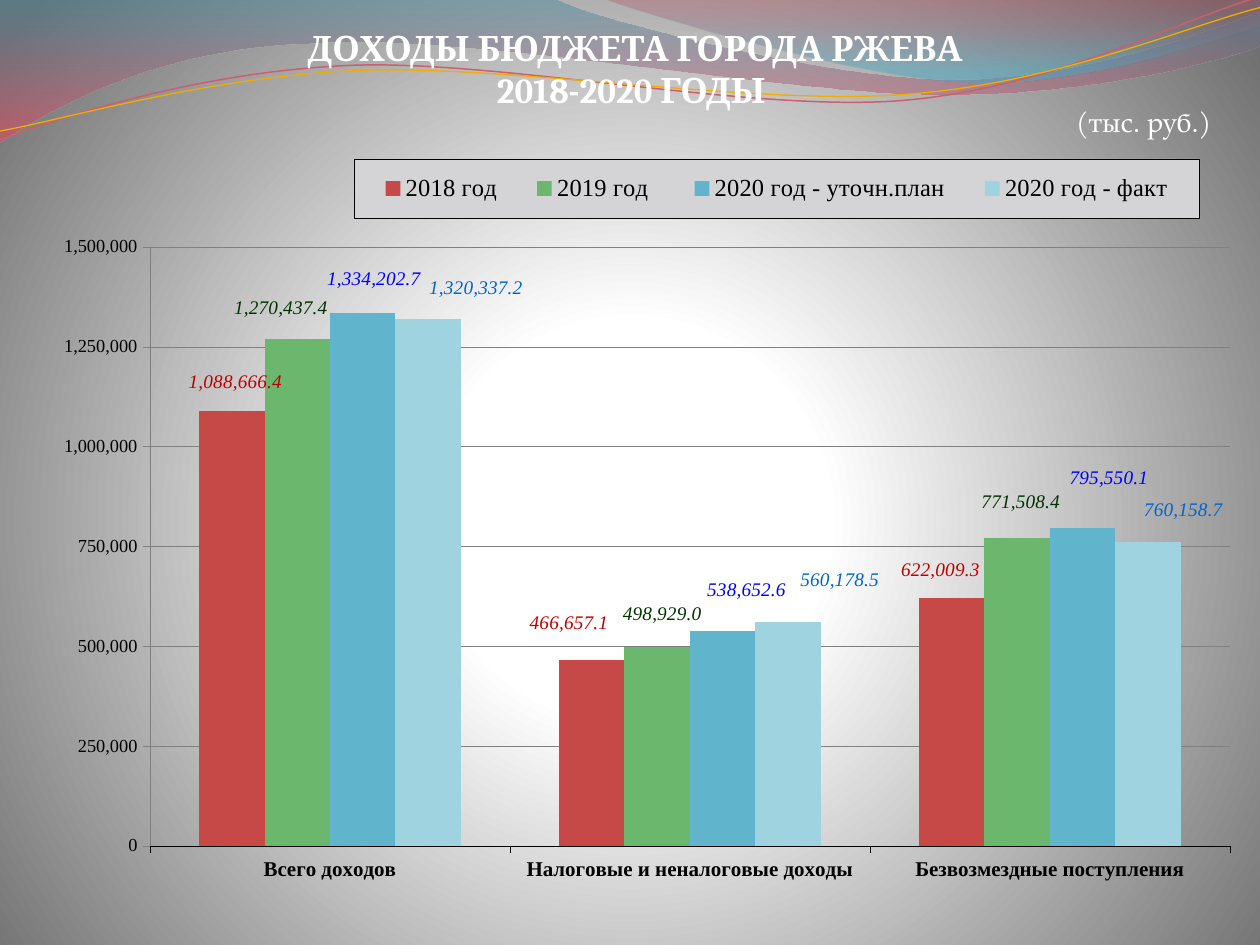
from math import cos, radians, sin

from pptx import Presentation
from pptx.chart.data import CategoryChartData
from pptx.dml.color import RGBColor
from pptx.enum.chart import (XL_CHART_TYPE as ChartType, XL_LABEL_POSITION as LabelPosition,
                             XL_LEGEND_POSITION as LegendPosition,
                             XL_TICK_LABEL_POSITION as TickLabels, XL_TICK_MARK as TickMark)
from pptx.enum.text import MSO_ANCHOR as Anchor, MSO_AUTO_SIZE as AutoSize, PP_ALIGN as Align
from pptx.oxml import parse_xml
from pptx.oxml.ns import nsdecls, qn
from pptx.util import Inches, Pt

COLORS = {
    "white": "FFFFFF", "black": "000000", "edge": "707070", "grid": "808080",
    "legend": "D4D4D6", "teal": "3F8A9F", "coral": "EF445B", "wine": "B84253",
    "sky": "42ABC7", "rose": "CB5F6E", "amber": "F0AD00",
}
SERIF = "Times New Roman"
BODY = "TeX Gyre Pagella"
DOWNWARD = '<a:lin ang="5400000" scaled="1"/>'
RADIAL = '<a:path path="circle"><a:fillToRect l="50000" t="55000" r="50000" b="45000"/></a:path>'
CHART_SIZE = (9.84, 6.33)
CATEGORIES = ["Всего доходов", "Налоговые и неналоговые доходы", "Безвозмездные поступления"]
SERIES = [
    ("2018 год", "C64847", "C00000", (1088666.4, 466657.1, 622009.3),
     ((0.03, -0.11), (-0.18, -0.17), (-0.09, -0.1))),
    ("2019 год ", "6BB76D", "003300", (1270437.4, 498929.0, 771508.4),
     ((-0.13, -0.12), (0.04, -0.14), (0.03, -0.16))),
    ("2020 год - уточн.план", "60B5CC", "0000FF", (1334202.7, 538652.6, 795550.1),
     ((0.09, -0.15), (0.19, -0.2), (0.21, -0.28))),
    ("2020 год - факт", "A0D3E0", "0066CC", (1320337.2, 560178.5, 760158.7),
     ((0.38, -0.12), (0.41, -0.21), (0.28, -0.14))),
]
WIDE_WAVE = [
    (0, 0), (4.4, -0.01), (4.76, 0.17, 6.64, 0.63, 7.58, 0.63),
    (8.53, 0.63, 9.58, 0.26, 10, 0.09), (10.01, 0.36), (9.83, 0.44, 8.7, 0.76, 7.46, 0.75),
    (6.22, 0.75, 3.82, 0.28, 2.57, 0.34), (1.29, 0.36, 0.46, 0.83, -0.01, 1.13), (0, 0),
]
RIGHT_WAVE = [
    (4.79, -0.01), (5.09, 0.11, 6.82, 0.62, 7.69, 0.65),
    (8.56, 0.69, 9.61, 0.32, 10, 0.21), (10, 0), (4.79, -0.01),
]
ROSE_LINE = [
    (0, 1.11), (0.48, 0.93, 1.58, 0.57, 2.77, 0.52),
    (3.95, 0.47, 5.93, 0.89, 7.13, 0.8), (8.33, 0.71, 9.38, 0.15, 9.98, -0.02),
]
AMBER_LINE = [
    (0, 1.04), (0.47, 0.96, 1.64, 0.61, 2.83, 0.56),
    (4.03, 0.51, 5.97, 0.84, 7.17, 0.75), (8.36, 0.67, 9.41, 0.21, 10, 0.06),
]


def rgb(name):
    """Return the colour for a palette name or a hex string."""
    return RGBColor.from_string(COLORS.get(name, name))


def style_font(font, size, face, color="black", bold=False, italic=False):
    """Set the look of a font."""
    font.size, font.name, font.bold, font.italic = Pt(size), face, bold, italic
    font.color.rgb = rgb(color)


def write_text(box, text, align=Align.LEFT, autosize=AutoSize.NONE, **look):
    """Fill a box with one paragraph for each line of text."""
    frame = box.text_frame
    frame.word_wrap, frame.auto_size, frame.vertical_anchor = True, autosize, Anchor.TOP
    for index, line in enumerate(text.split("\n")):
        para = frame.add_paragraph() if index else frame.paragraphs[0]
        para.alignment, para.space_before = align, Pt(0)
        span = para.add_run()
        span.text = line
        style_font(span.font, **look)


def place(box, left, top, width, height):
    """Move and size a box in inches."""
    box.left, box.top, box.width, box.height = map(Inches, (left, top, width, height))


def set_gradient(fill, owner, stops, direction):
    """Give the owner a gradient of (position, colour, opacity) stops."""
    fill.gradient()
    marks = "".join(
        f'<a:gs pos="{pos * 1000}"><a:srgbClr val="{COLORS[color]}">'
        f'<a:alpha val="{opacity * 1000}"/></a:srgbClr></a:gs>'
        for pos, color, opacity in stops)
    old = next(owner.iter(qn("a:gradFill")))
    old.getparent().replace(old, parse_xml(
        f'<a:gradFill {nsdecls("a")} rotWithShape="1"><a:gsLst>{marks}</a:gsLst>{direction}</a:gradFill>'))


def local_point(x, y, frame, rotation):
    """Return the path point that a rotated frame shows at a slide position."""
    left, top, width, height = frame
    dx, dy = x - left - width / 2, y - top - height / 2
    turn = radians(-rotation)
    across = dx * cos(turn) - dy * sin(turn) + width / 2
    down = dx * sin(turn) + dy * cos(turn) + height / 2
    return f'<a:pt x="{Inches(across)}" y="{Inches(down)}"/>'


def add_curve(page, segments, frame, rotation=0):
    """Draw an outline of straight and cubic segments without a shadow."""
    ends = [(Inches(part[-2]), Inches(part[-1])) for part in segments]
    closed = ends[0] == ends[-1]
    builder = page.shapes.build_freeform(*ends[0])
    builder.add_line_segments(ends[1:], close=closed)
    shape = builder.convert_to_shape()
    place(shape, *frame)
    shape.rotation, shape.shadow.inherit = rotation, False
    marks = ""
    for index, part in enumerate(segments):
        tag = "cubicBezTo" if len(part) == 6 else "lnTo" if index else "moveTo"
        points = "".join(local_point(x, y, frame, rotation) for x, y in zip(part[::2], part[1::2]))
        marks += f"<a:{tag}>{points}</a:{tag}>"
    marks += "<a:close/>" if closed else ""
    old = next(shape._element.iter(qn("a:path")))
    old.getparent().replace(old, parse_xml(
        f'<a:path {nsdecls("a")} w="{shape.width}" h="{shape.height}">{marks}</a:path>'))
    return shape


def add_wave(page, segments, frame, stops):
    """Draw a translucent wave."""
    wave = add_curve(page, segments, frame)
    set_gradient(wave.fill, wave._element, stops, DOWNWARD)
    wave.line.fill.background()


def add_ribbon(page, segments, frame, color, width):
    """Draw a thin curved line."""
    ribbon = add_curve(page, segments, frame, rotation=357.3)
    ribbon.fill.background()
    ribbon.line.color.rgb, ribbon.line.width = rgb(color), Pt(width)


def layout_xml(x, y, size=None, inner=False):
    """Build a manual chart layout from fractions of the chart."""
    values = {"x": x, "y": y}
    parts = '<c:layoutTarget val="inner"/>' if inner else ""
    if size:
        parts += '<c:xMode val="edge"/><c:yMode val="edge"/>'
        values.update(w=size[0], h=size[1])
    parts += "".join(f'<c:{key} val="{value:.4f}"/>' for key, value in values.items())
    return parse_xml(f'<c:layout {nsdecls("c")}><c:manualLayout>{parts}</c:manualLayout></c:layout>')


def set_layout(parent, layout, before):
    """Put a layout in front of the named child, replacing any old one."""
    for old in parent.findall(qn("c:layout")):
        parent.remove(old)
    parent.find(qn(before)).addprevious(layout)


def style_series(series, fill, ink, offsets):
    """Colour a series and shift its value labels."""
    series.format.fill.solid()
    series.format.fill.fore_color.rgb = rgb(fill)
    labels = series.data_labels
    labels.show_value, labels.position = True, LabelPosition.OUTSIDE_END
    labels.number_format, labels.number_format_is_linked = "#,##0.0", False
    style_font(labels.font, 11, SERIF, ink, italic=True)
    for index in range(len(offsets)):
        label = series.points[index].data_label
        label.position = LabelPosition.OUTSIDE_END
        style_font(label.font, 11, SERIF, ink, italic=True)
    for node, (dx, dy) in zip(series._element.iter(qn("c:dLbl")), offsets):
        number = parse_xml(f'<c:numFmt {nsdecls("c")} formatCode="#,##0.0" sourceLinked="0"/>')
        node.find(qn("c:idx")).addnext(number)
        set_layout(node, layout_xml(dx / CHART_SIZE[0], dy / CHART_SIZE[1]), "c:numFmt")
    for leader in series._element.iter(qn("c:showLeaderLines")):
        leader.set("val", "0")


def style_axis(axis, size, color, bold=False):
    """Set the ticks, line and font of an axis."""
    axis.major_tick_mark, axis.minor_tick_mark = TickMark.OUTSIDE, TickMark.NONE
    axis.format.line.color.rgb, axis.format.line.width = rgb(color), Pt(0.27)
    style_font(axis.tick_labels.font, size, SERIF, bold=bold)


def style_legend(chart):
    """Place the framed legend over the plot."""
    chart.has_legend = True
    legend = chart.legend
    legend.position, legend.include_in_layout = LegendPosition.RIGHT, False
    style_font(legend.font, 14, SERIF)
    set_layout(legend._element, layout_xml(0.2855, 0.0145, (0.682, 0.074)), "c:overlay")
    legend._element.find(qn("c:overlay")).addnext(parse_xml(
        f'<c:spPr {nsdecls("c", "a")}><a:solidFill><a:srgbClr val="{COLORS["legend"]}"/></a:solidFill>'
        f'<a:ln w="3175"><a:solidFill><a:srgbClr val="{COLORS["black"]}"/></a:solidFill></a:ln></c:spPr>'))


def add_income_chart(page):
    """Add the clustered columns of budget income."""
    data = CategoryChartData(number_format="#,##0.0")
    data.categories = CATEGORIES
    for name, fill, ink, values, offsets in SERIES:
        data.add_series(name, values)
    chart = page.shapes.add_chart(ChartType.COLUMN_CLUSTERED, Inches(0), Inches(1.17),
                                  *map(Inches, CHART_SIZE), data).chart
    chart.has_title = False
    style_font(chart.font, 12, BODY, bold=True)
    plot = chart.plots[0]
    plot.gap_width, plot.overlap, plot.vary_by_categories = 150, 0, False
    for series, (name, fill, ink, values, offsets) in zip(plot.series, SERIES):
        style_series(series, fill, ink, offsets)
    style_axis(chart.category_axis, 12, "black", bold=True)
    chart.category_axis.tick_label_position = TickLabels.LOW
    scale = chart.value_axis
    style_axis(scale, 10.5, "grid")
    scale.minimum_scale, scale.maximum_scale, scale.major_unit = 0, 1500000, 250000
    scale.tick_labels.number_format, scale.tick_labels.number_format_is_linked = "#,##0", False
    grid = scale.major_gridlines.format.line
    grid.color.rgb, grid.width = rgb("grid"), Pt(0.27)
    area = next(chart._chartSpace.iter(qn("c:plotArea")))
    set_layout(area, layout_xml(0.121, 0.125, (0.871, 0.751), inner=True), "c:barChart")
    style_legend(chart)


def main():
    """Build the budget income slide."""
    deck = Presentation()
    deck.slide_width, deck.slide_height = Inches(10), Inches(7.5)
    page = deck.slides.add_slide(deck.slide_layouts[5])
    set_gradient(page.background.fill, page._element,
                 [(0, "white", 100), (25, "white", 100), (100, "edge", 100)], RADIAL)
    add_wave(page, WIDE_WAVE, (-0.01, -0.01, 10.02, 1.14), [(0, "teal", 45), (100, "coral", 55)])
    add_wave(page, RIGHT_WAVE, (4.79, -0.01, 5.21, 0.7), [(0, "wine", 30), (80, "sky", 45)])
    add_ribbon(page, ROSE_LINE, (-0.02, 0.22, 10.02, 0.71), "rose", 0.85)
    add_ribbon(page, AMBER_LINE, (-0.02, 0.3, 10.03, 0.58), "amber", 0.75)
    unit = page.shapes.add_textbox(0, 0, 0, 0)
    place(unit, 8.44, 0.78, 1.41, 0.37)
    write_text(unit, "(тыс. руб.)", autosize=AutoSize.SHAPE_TO_FIT_TEXT,
               size=16, face=BODY, color="white")
    add_income_chart(page)
    title = page.shapes.title
    place(title, 1.72, 0.16, 6.64, 0.78)
    write_text(title, "ДОХОДЫ БЮДЖЕТА ГОРОДА РЖЕВА\n2018-2020 ГОДЫ ", align=Align.CENTER,
               size=20, face="Cambria", color="white", bold=True)
    page.shapes._spTree.append(title._element)
    deck.save("out.pptx")


if __name__ == "__main__":
    main()
